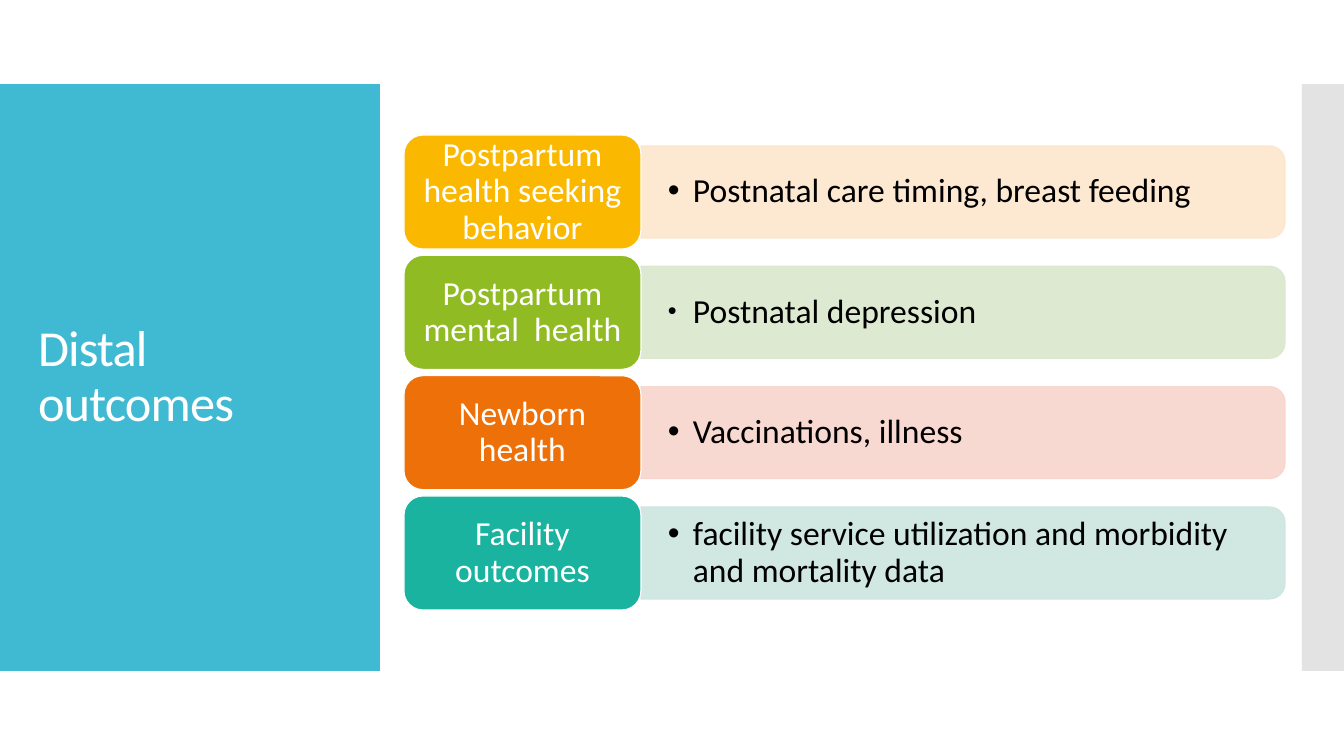
from dataclasses import dataclass

from lxml import etree
from pptx import Presentation
from pptx.dml.color import RGBColor
from pptx.enum.shapes import MSO_SHAPE
from pptx.enum.text import MSO_ANCHOR, MSO_AUTO_SIZE, PP_ALIGN
from pptx.oxml.ns import qn
from pptx.util import Pt

RECTANGLE = MSO_SHAPE.RECTANGLE
ROUNDED = MSO_SHAPE.ROUNDED_RECTANGLE
ROUNDED_TOP = MSO_SHAPE.ROUND_2_SAME_RECTANGLE
MIDDLE = MSO_ANCHOR.MIDDLE
NO_AUTOFIT = MSO_AUTO_SIZE.NONE
LEFT, CENTER = PP_ALIGN.LEFT, PP_ALIGN.CENTER

TITLE = "Distal outcomes"
OUTCOMES = [
    ("Postpartum health seeking behavior", "Postnatal care timing, breast feeding", "FAB900", "FDE6CC", 100),
    ("Postpartum mental  health", "Postnatal depression", "90BB23", "DBE7CD", 75),
    ("Newborn health", "Vaccinations, illness", "EE7008", "F8D5CC", 100),
    ("Facility outcomes", "facility service utilization and morbidity and mortality data", "1AB39F", "CDE5DF", 100),
]


@dataclass(frozen=True)
class Theme:
    font: str = "Calibri"
    bullet_font: str = "Arial"
    title_size: int = 36
    body_size: int = 24
    line_width: float = 0.85
    line_spacing: float = 0.9
    white: str = "FFFFFF"
    black: str = "000000"
    panel: str = "40BAD2"
    edge: str = "C8C8C8"
    edge_opacity: int = 50
    bar_opacity: int = 90


THEME = Theme()
SLIDE_SIZE = (1344, 756)
PANELS = [
    ((0, 84, 380, 587), THEME.panel, 100),
    ((1302, 84, 42, 587), THEME.edge, THEME.edge_opacity),
]
TITLE_BOX = (28, 124, 325, 507)
FIRST_TOP, LAST_TOP = 135, 496
LABEL_LEFT, LABEL_WIDTH, LABEL_HEIGHT = 404, 237, 114
BAR_WIDTH, BAR_HEIGHT = 644, 92
DETAIL_WIDTH, DETAIL_HEIGHT = 639, 83
TITLE_INSETS = (10, 5)
LABEL_INSETS = (8, 0)
DETAIL_INSETS = (27, 14)
BULLET_INDENT = 25


def emu(px):
    return round(px * 914400 / 100.8)


def place(shape, box):
    shape.left, shape.top, shape.width, shape.height = map(emu, box)


def set_opacity(shape, opacity):
    for color in shape._element.spPr.iter(qn("a:srgbClr")):
        etree.SubElement(color, qn("a:alpha"), val=str(opacity * 1000))


def add_block(slide, kind, box, fill, line=None, opacity=100):
    block = slide.shapes.add_shape(kind, *map(emu, box))
    block.shadow.inherit = False
    block.fill.solid()
    block.fill.fore_color.rgb = RGBColor.from_string(fill)
    if line:
        block.line.color.rgb = RGBColor.from_string(line)
        block.line.width = Pt(THEME.line_width)
    else:
        block.line.fill.background()
    if opacity < 100:
        set_opacity(block, opacity)
    return block


def write(shape, text, size, color, alignment, insets):
    frame = shape.text_frame
    frame.text = text
    frame.word_wrap = True
    frame.auto_size = NO_AUTOFIT
    frame.vertical_anchor = MIDDLE
    frame.margin_left = frame.margin_right = emu(insets[0])
    frame.margin_top = frame.margin_bottom = emu(insets[1])
    paragraph = frame.paragraphs[0]
    paragraph.alignment = alignment
    paragraph.line_spacing = THEME.line_spacing
    font = paragraph.runs[0].font
    font.name = THEME.font
    font.size = Pt(size)
    font.color.rgb = RGBColor.from_string(color)
    return paragraph


def add_bullet(paragraph, size_percent):
    properties = paragraph._p.get_or_add_pPr()
    properties.set("marL", str(emu(BULLET_INDENT)))
    properties.set("indent", str(-emu(BULLET_INDENT)))
    etree.SubElement(properties, qn("a:buSzPct"), val=str(size_percent * 1000))
    etree.SubElement(properties, qn("a:buFont"), typeface=THEME.bullet_font)
    etree.SubElement(properties, qn("a:buChar"), char="•")


def add_title(slide):
    title = slide.shapes.title
    place(title, TITLE_BOX)
    paragraph = write(title, TITLE, THEME.title_size, THEME.white, LEFT, TITLE_INSETS)
    paragraph.runs[0]._r.get_or_add_rPr().set("spc", "-60")
    slide.shapes._spTree.append(title._element)


def add_outcome(slide, top, outcome):
    label_text, detail_text, label_color, bar_color, bullet_size = outcome
    bar_left = LABEL_LEFT + LABEL_WIDTH
    middle = top + LABEL_HEIGHT / 2
    bar_center = bar_left + BAR_WIDTH / 2
    bar_box = (bar_center - BAR_HEIGHT / 2, middle - BAR_WIDTH / 2, BAR_HEIGHT, BAR_WIDTH)
    bar = add_block(slide, ROUNDED_TOP, bar_box, bar_color, bar_color, THEME.bar_opacity)
    bar.rotation = 90

    detail_box = (bar_left, middle - DETAIL_HEIGHT / 2, DETAIL_WIDTH, DETAIL_HEIGHT)
    detail = slide.shapes.add_textbox(*map(emu, detail_box))
    paragraph = write(detail, detail_text, THEME.body_size, THEME.black, LEFT, DETAIL_INSETS)
    add_bullet(paragraph, bullet_size)

    label_box = (LABEL_LEFT, top, LABEL_WIDTH, LABEL_HEIGHT)
    label = add_block(slide, ROUNDED, label_box, label_color, THEME.white)
    write(label, label_text, THEME.body_size, THEME.white, CENTER, LABEL_INSETS)


def main():
    presentation = Presentation()
    presentation.slide_width, presentation.slide_height = map(emu, SLIDE_SIZE)
    slide = presentation.slides.add_slide(presentation.slide_layouts[5])
    for box, color, opacity in PANELS:
        add_block(slide, RECTANGLE, box, color, opacity=opacity)
    add_title(slide)
    pitch = (LAST_TOP - FIRST_TOP) / (len(OUTCOMES) - 1)
    for row, outcome in enumerate(OUTCOMES):
        add_outcome(slide, FIRST_TOP + row * pitch, outcome)
    presentation.save("out.pptx")


if __name__ == "__main__":
    main()
